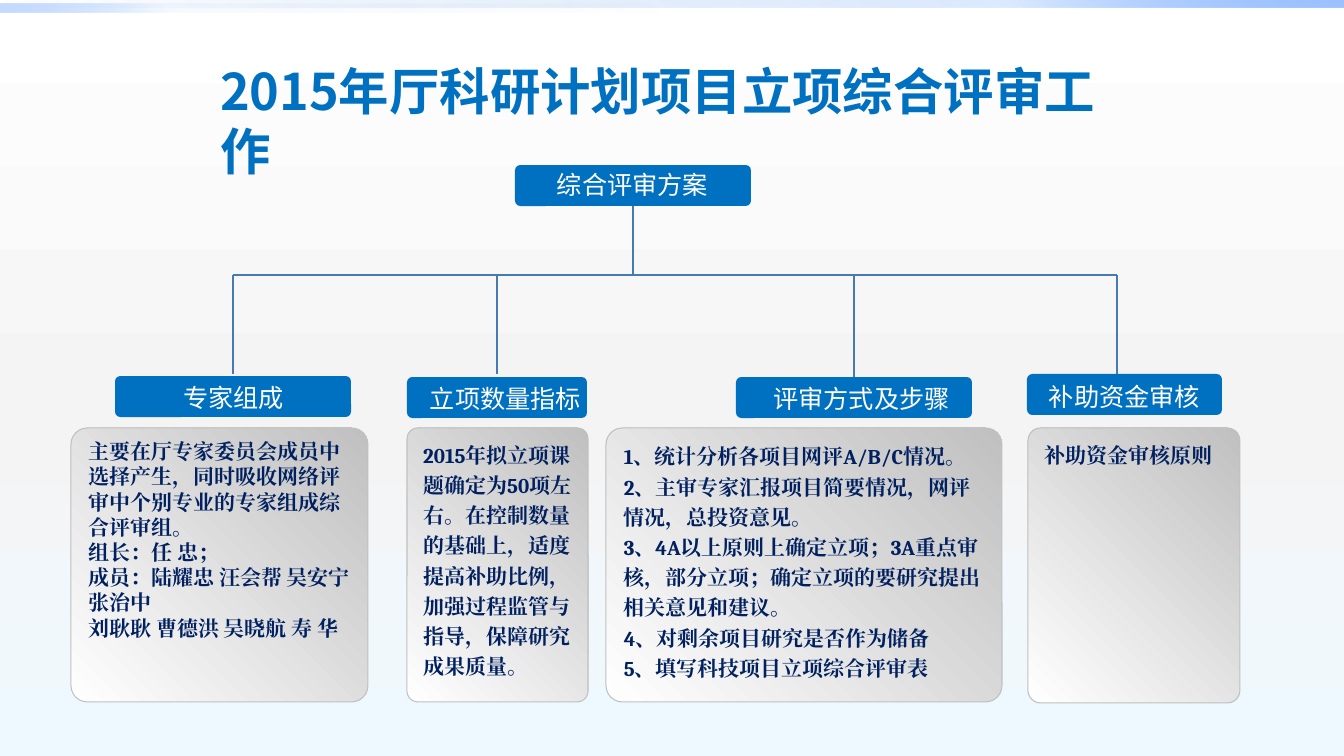
from lxml import etree
from pptx import Presentation
from pptx.dml.color import RGBColor as RGB
from pptx.enum.shapes import MSO_CONNECTOR as CONNECTOR, MSO_SHAPE as SHAPE
from pptx.enum.text import MSO_ANCHOR as ANCHOR, PP_ALIGN as ALIGN
from pptx.oxml.ns import qn
from pptx.util import Pt

PX = 914400 / 100.8  # EMU in one px
WIDTH, HEIGHT = 1344, 756
BRANCH_Y = 275
COLORS = {"blue": "0070C0", "navy": "002060", "white": "FFFFFF",
          "silver": "C0C0C0", "mist": "F4F4F4", "ice": "EEF9FF",
          "branch": "477AB1", "deep": "0058B7", "sky": "4F95FF", "pale": "9EC2FF"}
TITLE = {"size": 36, "name": "Noto Sans CJK SC", "color": "blue", "bold": True}
CAPTION = {"size": 18, "name": "Arial", "color": "white", "bold": False}
BODY = {"size": 15, "name": "Cambria", "color": "navy", "bold": True}
PANEL_GRADIENT = [(0, "white", 100), (100, "silver", 100)]

# Each box is left, top, width, height
COLUMNS = [
    {"caption": "专家组成", "header": (115, 376, 236, 41),
     "caption_box": (115, 376, 237, 43), "panel": (71, 428, 297, 274),
     "drop": (233, 374), "spacing": 1.0,
     "body": ["主要在厅专家委员会成员中选择产生，同时吸收网络评审中个别专业的专家组成综合评审组。",
              "组长：任 忠；", "成员：陆耀忠 汪会帮 吴安宁 张治中",
              "刘耿耿 曹德洪 吴晓航 寿 华"]},
    {"caption": "立项数量指标", "header": (407, 377, 180, 41),
     "caption_box": (405, 377, 201, 43), "panel": (407, 428, 181, 274),
     "drop": (497, 374), "spacing": 1.2,
     "body": ["2015年拟立项课题确定为50项左右。在控制数量的基础上，适度提高补助比例，"
              "加强过程监管与指导，保障研究成果质量。"]},
    {"caption": "评审方式及步骤", "header": (736, 377, 236, 41),
     "caption_box": (743, 377, 237, 43), "panel": (606, 428, 396, 274),
     "drop": (854, 377), "spacing": 1.2,
     "body": ["1、统计分析各项目网评A/B/C情况。",
              "2、主审专家汇报项目简要情况，网评情况，总投资意见。",
              "3、4A以上原则上确定立项；3A重点审核，部分立项；确定立项的要研究提出相关意见和建议。",
              "4、对剩余项目研究是否作为储备", "5、填写科技项目立项综合评审表"]},
    {"caption": "补助资金审核", "header": (1027, 374, 195, 41),
     "caption_box": (1027, 375, 195, 43), "panel": (1028, 428, 212, 275),
     "drop": (1117, 374), "spacing": 1.2, "body": ["补助资金审核原则"]},
]


def emu(*lengths):
    return [round(length * PX) for length in lengths]


def paint_gradient(parent, stops, angle):
    """Swap the solid fill in parent for a gradient of (position, colour, opacity)."""
    gradient = etree.Element(qn("a:gradFill"), rotWithShape="1")
    stop_list = etree.SubElement(gradient, qn("a:gsLst"))
    for position, color, opacity in stops:
        stop = etree.SubElement(stop_list, qn("a:gs"), pos=str(position * 1000))
        tint = etree.SubElement(stop, qn("a:srgbClr"), val=COLORS[color])
        if opacity < 100:
            etree.SubElement(tint, qn("a:alpha"), val=str(opacity * 1000))
    etree.SubElement(gradient, qn("a:lin"), ang=str(angle * 60000), scaled="0")
    solid = parent.find(".//" + qn("a:solidFill"))
    solid.getparent().replace(solid, gradient)


def add_block(slide, kind, box, color, corner=None):
    block = slide.shapes.add_shape(kind, *emu(*box))
    block.shadow.inherit = False
    block.fill.solid()
    block.fill.fore_color.rgb = RGB.from_string(COLORS[color])
    block.line.fill.background()
    if corner is not None:
        block.adjustments[0] = corner
    return block


def write(frame, lines, style, align=ALIGN.LEFT, spacing=1.0):
    left, top = emu(13, 6)
    layout = {"word_wrap": True, "vertical_anchor": ANCHOR.TOP,
              "margin_left": left, "margin_right": left,
              "margin_top": top, "margin_bottom": top}
    for key, value in layout.items():
        setattr(frame, key, value)
    for index, line in enumerate(lines):
        paragraph = frame.paragraphs[0] if index == 0 else frame.add_paragraph()
        paragraph.alignment = align
        paragraph.line_spacing = spacing
        run = paragraph.add_run()
        run.text = line
        font_values = {"size": Pt(style["size"]), "bold": style["bold"],
                       "name": style["name"]}
        for key, value in font_values.items():
            setattr(run.font, key, value)
        run.font.color.rgb = RGB.from_string(COLORS[style["color"]])
        properties = run._r.get_or_add_rPr()
        properties.set("lang", "zh-CN")
        # East Asian glyphs take the same font as the Latin ones
        latin = properties.find(qn("a:latin"))
        latin.addnext(etree.Element(qn("a:ea"), typeface=style["name"]))


def add_text(slide, box, line, style, align=ALIGN.LEFT):
    write(slide.shapes.add_textbox(*emu(*box)).text_frame, [line], style, align)


def add_branch(slide, start, end):
    branch = slide.shapes.add_connector(CONNECTOR.STRAIGHT, *emu(*start, *end))
    branch.line.color.rgb = RGB.from_string(COLORS["branch"])
    branch.line.width = Pt(1)
    etree.SubElement(branch._element.spPr, qn("a:effectLst"))


def add_backdrop(slide):
    slide.background.fill.solid()
    paint_gradient(slide._element.cSld,
                   [(0, "white", 100), (55, "mist", 100), (100, "ice", 100)], 90)
    ribbons = [((0, 0, WIDTH, 8), 20, 100, 315), ((0, 4, WIDTH // 2, 8), 5, 60, 135)]
    for box, middle, end, angle in ribbons:
        ribbon = add_block(slide, SHAPE.RECTANGLE, box, "pale")
        paint_gradient(ribbon._element.spPr,
                       [(0, "deep", 0), (75, "sky", middle), (100, "pale", end)], angle)


def add_header(slide, box, caption_box, caption):
    add_block(slide, SHAPE.ROUNDED_RECTANGLE, box, "blue", 0.13)
    add_text(slide, caption_box, caption, CAPTION, ALIGN.CENTER)


def add_column(slide, column):
    add_header(slide, column["header"], column["caption_box"], column["caption"])
    panel = add_block(slide, SHAPE.ROUNDED_RECTANGLE, column["panel"], "silver", 0.06)
    paint_gradient(panel._element.spPr, PANEL_GRADIENT, 315)
    panel.line.color.rgb = RGB.from_string(COLORS["silver"])
    panel.line.width = Pt(0.75)
    write(panel.text_frame, column["body"], BODY, spacing=column["spacing"])


def add_tree(slide, root):
    left, top, width, height = root
    trunk_x = left + width // 2
    drops = [column["drop"] for column in COLUMNS]
    add_branch(slide, (drops[0][0], BRANCH_Y), (drops[-1][0], BRANCH_Y))
    add_branch(slide, (trunk_x, top + height), (trunk_x, BRANCH_Y))
    for x, bottom in drops:
        add_branch(slide, (x, BRANCH_Y), (x, bottom))


def build_review_slide(deck):
    slide = deck.slides.add_slide(deck.slide_layouts[6])
    root = (515, 165, 236, 41)
    add_backdrop(slide)
    add_header(slide, root, (514, 163, 237, 43), "综合评审方案")
    for column in COLUMNS:
        add_column(slide, column)
    add_text(slide, (207, 54, 935, 75), "2015年厅科研计划项目立项综合评审工作", TITLE)
    add_tree(slide, root)


def main():
    deck = Presentation()
    deck.slide_width, deck.slide_height = emu(WIDTH, HEIGHT)
    build_review_slide(deck)
    deck.save("out.pptx")


if __name__ == "__main__":
    main()
